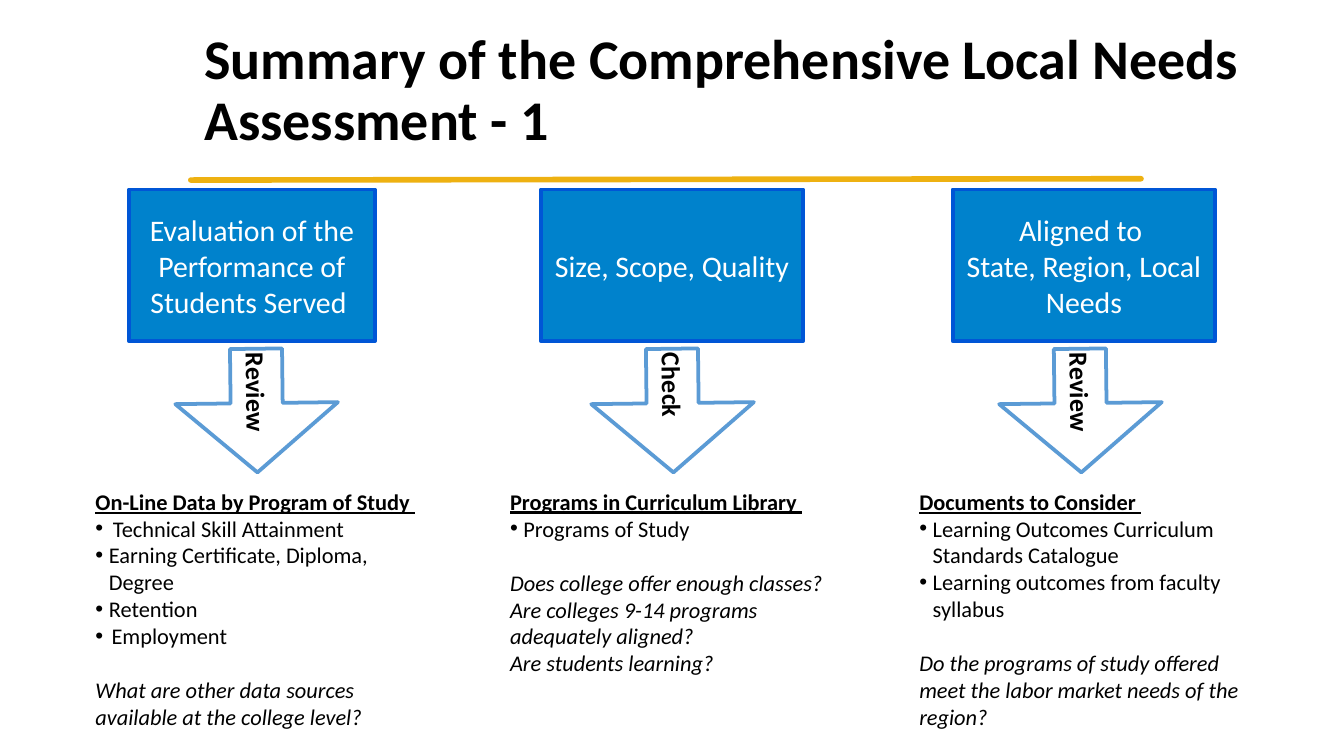
import pptx
import pptx.util
import pptx.dml.color
import pptx.enum.shapes
import pptx.enum.text
import pptx.oxml.ns
import lxml.etree

# Content
TITLE = "Summary of the Comprehensive Local Needs Assessment - 1"
# Each topic: box lines, box width, arrow word, heading,
# bullets as (text, indent), questions, and places of arrow and list
TOPICS = [
    {"box": ["Evaluation of the Performance of Students Served "], "width": 1.83,
     "action": "Review", "heading": "On-Line Data by Program of Study ",
     "bullets": [("Technical Skill Attainment", 0.13),
                 ("Earning Certificate, Diploma, Degree", 0.1),
                 ("Retention", 0.1), ("Employment", 0.12)],
     "questions": ["What are other data sources available at the college level?"],
     "arrow_left": 0.49, "list_left": -0.28, "list_height": 2.08},
    {"box": ["Size, Scope, Quality"], "width": 1.95,
     "action": "Check", "heading": "Programs in Curriculum Library ",
     "bullets": [("Programs of Study", 0.1)],
     "questions": ["Does college offer enough classes?",
                   "Are colleges 9-14 programs adequately aligned?",
                   "Are students learning?"],
     "arrow_left": 0.52, "list_left": -0.26, "list_height": 1.47},
    {"box": ["Aligned to ", "State, Region, Local", "Needs"], "width": 1.95,
     "action": "Review", "heading": "Documents to Consider ",
     "bullets": [("Learning Outcomes Curriculum Standards Catalogue", 0.1),
                 ("Learning outcomes from faculty syllabus", 0.1)],
     "questions": ["Do the programs of study offered meet the labor market "
                   "needs of the region?"],
     "arrow_left": 0.49, "list_left": -0.28, "list_height": 2.08},
]
COLORS = {"text": "000000", "white": "FFFFFF", "box": "0082CC",
          "box_edge": "0056D6", "arrow_edge": "5B9BD5", "rule": "EEB111"}
FONT = "Calibri"

# Grid
SLIDE_WIDTH = 10
SLIDE_HEIGHT = SLIDE_WIDTH * 9 / 16
FIRST_LEFT, LAST_LEFT = 0.96, 7.09
PITCH = (LAST_LEFT - FIRST_LEFT) / (len(TOPICS) - 1)
BOX_TOP, BOX_HEIGHT = 1.41, 1.13
ARROW_TOP, ARROW_WIDTH, ARROW_HEIGHT = 2.45, 0.92, 1.21
LIST_TOP, LIST_WIDTH = 3.6, 2.49
INSET = 0.03

Inches, Pt = pptx.util.Inches, pptx.util.Pt
ANCHOR, ALIGN = pptx.enum.text.MSO_ANCHOR, pptx.enum.text.PP_ALIGN
SHAPE = pptx.enum.shapes.MSO_SHAPE
qn = pptx.oxml.ns.qn


def rgb(name):
    return pptx.dml.color.RGBColor.from_string(COLORS[name])


def add_text(paragraph, text, size, color="text", **style):
    run = paragraph.add_run()
    run.text = text
    run.font.name, run.font.size = FONT, Pt(size)
    run.font.color.rgb = rgb(color)
    for key, value in style.items():
        setattr(run.font, key, value)


def prepare_frame(shape, anchor):
    frame = shape.text_frame
    frame.word_wrap = True
    frame.vertical_anchor = anchor
    frame.margin_left = frame.margin_right = Inches(INSET)
    frame.margin_top = frame.margin_bottom = Inches(INSET)
    return frame


def next_paragraph(frame):
    first = frame.paragraphs[0]
    return frame.add_paragraph() if first.runs else first


def add_panel(kind, left, top, width, height, fill, edge):
    panel = slide.shapes.add_shape(kind, Inches(left), Inches(top),
                                   Inches(width), Inches(height))
    panel.shadow.inherit = False
    panel.fill.solid()
    panel.fill.fore_color.rgb = rgb(fill)
    panel.line.color.rgb = rgb(edge)
    panel.line.width = Pt(2)
    return panel


def add_bullet(paragraph, indent):
    properties = paragraph._p.get_or_add_pPr()
    properties.set("marL", str(Inches(indent)))
    properties.set("indent", str(-Inches(indent)))
    lxml.etree.SubElement(properties, qn("a:buFont")).set("typeface", "Arial")
    lxml.etree.SubElement(properties, qn("a:buChar")).set("char", "•")


deck = pptx.Presentation()
deck.slide_width, deck.slide_height = Inches(SLIDE_WIDTH), Inches(SLIDE_HEIGHT)
slide = deck.slides.add_slide(deck.slide_layouts[5])

# Title
title = slide.shapes.title
title.left, title.top = Inches(1.42), Inches(0.14)
title.width, title.height = Inches(8.05), Inches(1.09)
title.text_frame.word_wrap = True
title.text_frame.auto_size = pptx.enum.text.MSO_AUTO_SIZE.NONE
title.text_frame.vertical_anchor = ANCHOR.MIDDLE
headline = title.text_frame.paragraphs[0]
headline.alignment, headline.line_spacing = ALIGN.LEFT, 0.9
add_text(headline, TITLE, 30, bold=True)

# Rule under the title
rule = slide.shapes.add_connector(pptx.enum.shapes.MSO_CONNECTOR.STRAIGHT,
                                  Inches(1.42), Inches(1.34), Inches(8.49), Inches(1.33))
rule.line.color.rgb = rgb("rule")
rule.line.width = Pt(3)
rule_properties = rule._element.spPr
rule_properties.find(qn("a:ln")).set("cap", "rnd")
lxml.etree.SubElement(rule_properties, qn("a:effectLst"))

for column, topic in enumerate(TOPICS):
    left = FIRST_LEFT + column * PITCH

    # Topic box
    box = add_panel(SHAPE.RECTANGLE, left, BOX_TOP, topic["width"], BOX_HEIGHT,
                    "box", "box_edge")
    box_frame = prepare_frame(box, ANCHOR.MIDDLE)
    for line in topic["box"]:
        paragraph = next_paragraph(box_frame)
        paragraph.alignment = ALIGN.CENTER
        add_text(paragraph, line, 16, "white")

    # List with heading, bullets and questions
    details = slide.shapes.add_textbox(Inches(left + topic["list_left"]), Inches(LIST_TOP),
                                       Inches(LIST_WIDTH), Inches(topic["list_height"]))
    details_frame = prepare_frame(details, ANCHOR.TOP)
    add_text(next_paragraph(details_frame), topic["heading"], 12, bold=True, underline=True)
    for text, indent in topic["bullets"]:
        paragraph = next_paragraph(details_frame)
        add_bullet(paragraph, indent)
        add_text(paragraph, text, 12)
    for position, question in enumerate(topic["questions"]):
        paragraph = next_paragraph(details_frame)
        if position == 0:
            paragraph.space_before = Pt(14.6)
        add_text(paragraph, question, 12, italic=True)

    # Arrow from box to list
    arrow = add_panel(SHAPE.RIGHT_ARROW, left + topic["arrow_left"], ARROW_TOP,
                      ARROW_WIDTH, ARROW_HEIGHT, "white", "arrow_edge")
    arrow.rotation = 89.3
    arrow.adjustments[0], arrow.adjustments[1] = 0.32, 0.56
    action = next_paragraph(prepare_frame(arrow, ANCHOR.MIDDLE))
    action.alignment = ALIGN.LEFT
    add_text(action, topic["action"], 14, bold=True)

deck.save("out.pptx")
